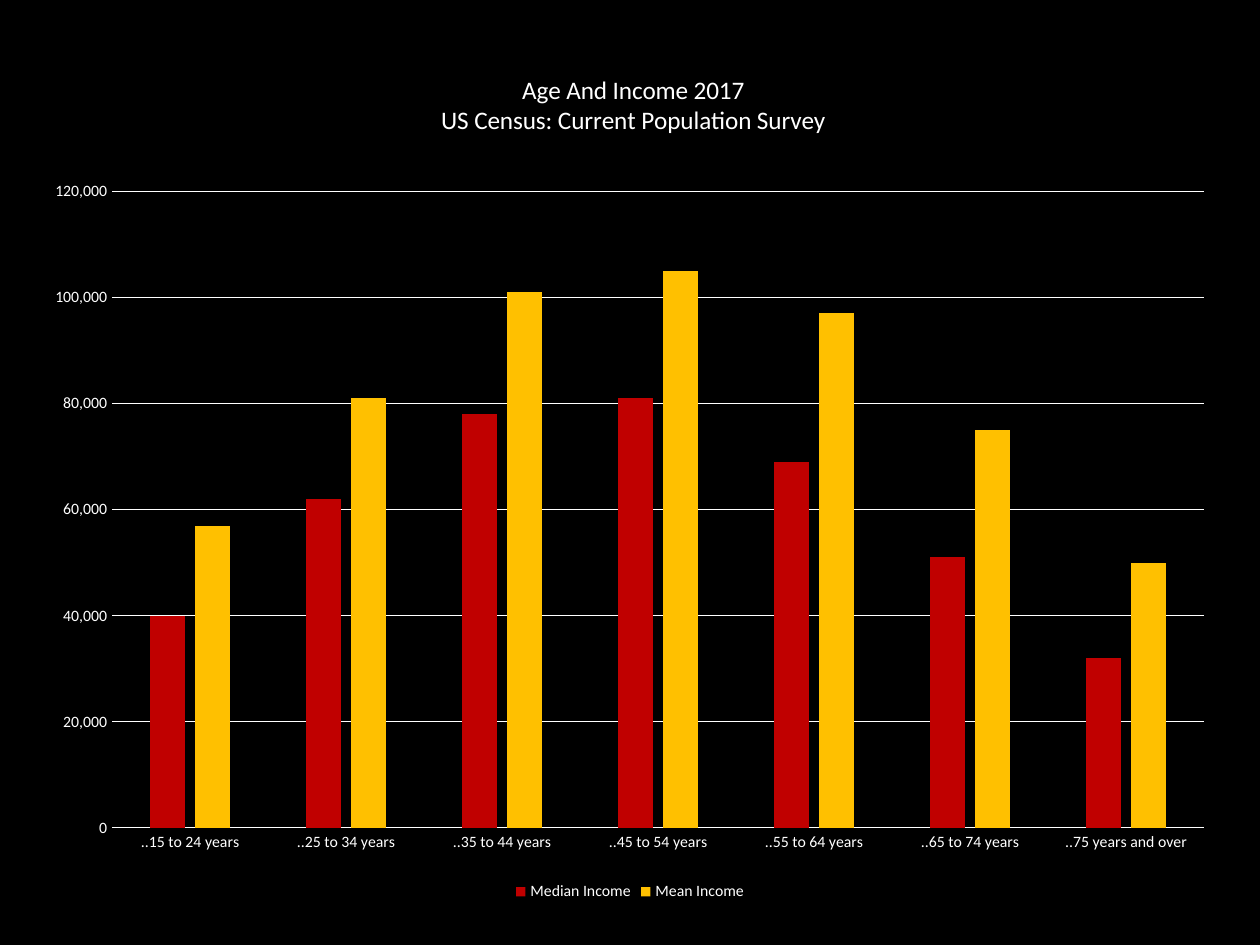
"""Build a slide with a column chart of median and mean income by age."""
from lxml.etree import SubElement
from pptx import Presentation
from pptx.chart.data import CategoryChartData
from pptx.dml.color import RGBColor as Rgb
from pptx.enum.chart import XL_CHART_TYPE as ChartType
from pptx.enum.chart import XL_LEGEND_POSITION as LegendPosition
from pptx.enum.chart import XL_TICK_MARK as TickMark
from pptx.oxml import parse_xml
from pptx.oxml.ns import nsdecls, qn
from pptx.util import Pt

THEME = {
    "font": "Calibri",
    "background": Rgb.from_string("000000"),
    "text": Rgb.from_string("FFFFFF"),
    "median": Rgb.from_string("C00000"),
    "mean": Rgb.from_string("FFC000"),
    "title_size": Pt(14.4),
    "label_size": Pt(9),
    "rule": Pt(0.75),
}
PX = 914400 / 126
LEFT, TOP, WIDTH, HEIGHT = 32, 39, 1196, 867


def style_font(font, size):
    font.color.rgb = THEME["text"]
    for name, value in {"name": THEME["font"], "size": size, "bold": False}.items():
        setattr(font, name, value)


def place(parent, index, settings):
    for previous in parent.findall(qn("c:layout")):
        parent.remove(previous)
    layout = parse_xml(f"<c:layout {nsdecls('c')}/>")
    manual = SubElement(layout, qn("c:manualLayout"))
    for tag, value in settings.items():
        SubElement(manual, qn(f"c:{tag}")).set("val", str(value))
    parent.insert(index, layout)


deck = Presentation()
deck.slide_width, deck.slide_height = round(1260 * PX), round(945 * PX)
slide = deck.slides.add_slide(deck.slide_layouts[6])
slide.background.fill.solid()
slide.background.fill.fore_color.rgb = THEME["background"]

incomes = CategoryChartData(number_format="#,##0")
spans = [f"..{age} to {age + 9} years" for age in range(15, 75, 10)]
incomes.categories = spans + ["..75 years and over"]
incomes.add_series("Median Income", (40000, 62000, 78000, 81000, 69000, 51000, 32000))
incomes.add_series("Mean Income", (57000, 81000, 101000, 105000, 97000, 75000, 50000))
bounds = [round(length * PX) for length in (LEFT, TOP, WIDTH, HEIGHT)]
chart = slide.shapes.add_chart(ChartType.COLUMN_CLUSTERED, *bounds, incomes).chart
style_font(chart.font, THEME["label_size"])
chart.element.find(qn("c:txPr")).addprevious(
    parse_xml(f"<c:spPr {nsdecls('c', 'a')}><a:noFill/><a:ln><a:noFill/></a:ln></c:spPr>")
)

heading = chart.chart_title.text_frame
heading.text = "Age And Income 2017\nUS Census: Current Population Survey"
for paragraph in heading.paragraphs:
    for run in paragraph.runs:
        style_font(run.font, THEME["title_size"])
place(chart.chart_title.element, 1, {
    "xMode": "edge", "yMode": "edge",
    "x": round((437 - LEFT) / WIDTH, 3), "y": round((69 - TOP) / HEIGHT, 3),
})
place(chart.element.find(f".//{qn('c:plotArea')}"), 0, {
    "layoutTarget": "inner", "xMode": "edge", "yMode": "edge",
    "x": round((112 - LEFT) / WIDTH, 3), "y": round((192 - TOP) / HEIGHT, 3),
    "w": round(1092 / WIDTH, 3), "h": round(636 / HEIGHT, 3),
})

columns = chart.plots[0]
for name, value in {"gap_width": 219, "overlap": -27, "vary_by_categories": False}.items():
    setattr(columns, name, value)
for measure, color in zip(columns.series, (THEME["median"], THEME["mean"])):
    measure.format.fill.solid()
    measure.format.fill.fore_color.rgb = color
    measure.invert_if_negative = False

ages, dollars = chart.category_axis, chart.value_axis
for axis in (ages, dollars):
    axis.major_tick_mark = axis.minor_tick_mark = TickMark.NONE
    style_font(axis.tick_labels.font, THEME["label_size"])
scale = {"minimum_scale": 0, "maximum_scale": 120000, "major_unit": 20000}
for name, value in {**scale, "has_major_gridlines": True}.items():
    setattr(dollars, name, value)
dollars.tick_labels.number_format = "#,##0"
dollars.tick_labels.number_format_is_linked = False
dollars.format.line.fill.background()
for line in (ages.format.line, dollars.major_gridlines.format.line):
    line.color.rgb = THEME["text"]
    line.width = THEME["rule"]

chart.has_legend = True
chart.legend.position = LegendPosition.BOTTOM
chart.legend.include_in_layout = False
style_font(chart.legend.font, THEME["label_size"])

deck.save("out.pptx")
